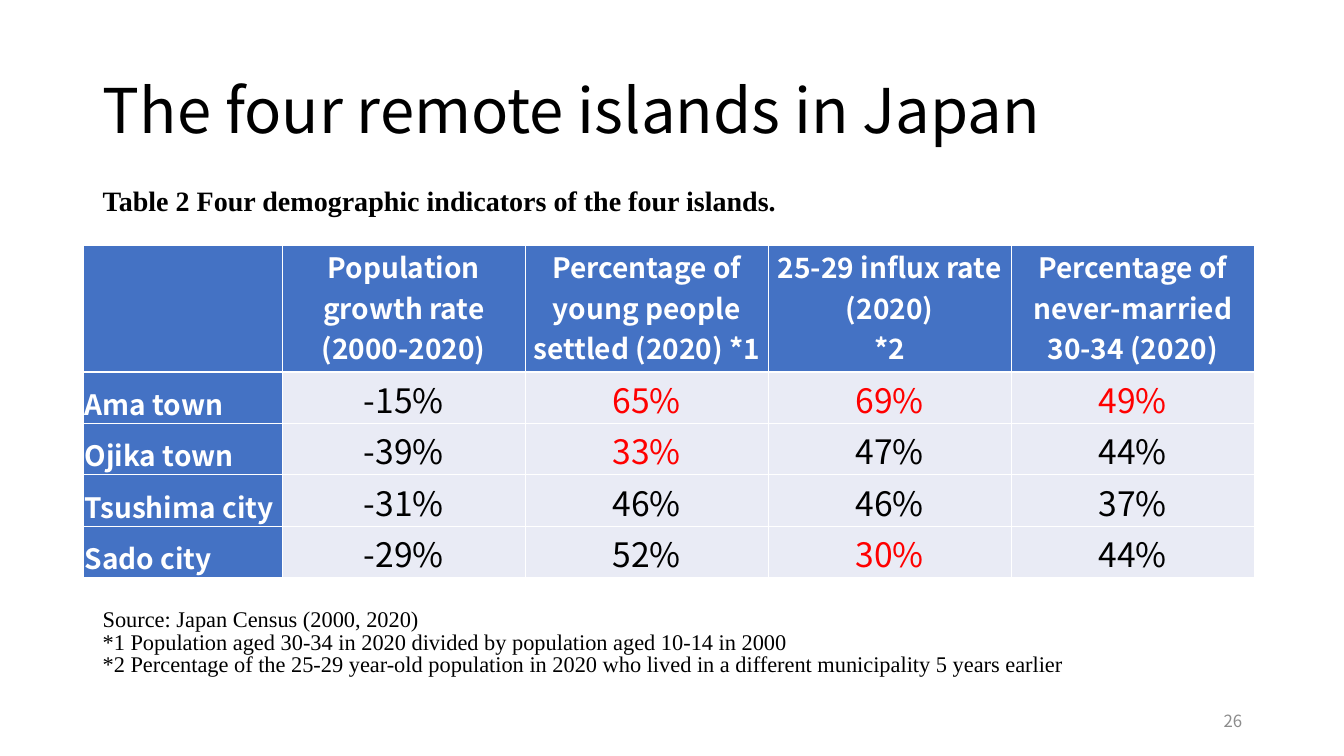
from pptx import Presentation
from pptx import util as u
from pptx.dml.color import RGBColor
from pptx.enum import text
from pptx.oxml import parse_xml
from pptx.oxml.ns import nsdecls

COLORS = {"black": "000000", "white": "FFFFFF", "gray": "8C8C8C",
          "red": "FF0000", "blue": "4472C4", "pale": "E9EBF5"}
SANS, SERIF = "Noto Sans CJK JP", "Times New Roman"
LEFT, CENTER, RIGHT, JUSTIFY = (text.PP_ALIGN.LEFT, text.PP_ALIGN.CENTER,
                                text.PP_ALIGN.RIGHT, text.PP_ALIGN.JUSTIFY)
TOP, MIDDLE, BOTTOM = text.MSO_ANCHOR.TOP, text.MSO_ANCHOR.MIDDLE, text.MSO_ANCHOR.BOTTOM


def write(frame, lines, size, font=SANS, color="black", bold=False, align=LEFT, spacing=None):
    """Fill a text frame with one paragraph per line."""
    frame.word_wrap = True
    for index, line in enumerate(lines):
        para = frame.paragraphs[0] if index == 0 else frame.add_paragraph()
        para.text = line
        para.alignment = align
        para.line_spacing = spacing
        for span in para.runs:
            span.font.size = u.Pt(size)
            span.font.name = font
            span.font.bold = bold
            span.font.color.rgb = RGBColor.from_string(COLORS[color])


deck = Presentation()
deck.slide_width, deck.slide_height = u.Inches(13.33), u.Inches(7.5)
page = deck.slides.add_slide(deck.slide_layouts[5])

# Title
title = page.shapes.title
title.left, title.top = u.Inches(0.92), u.Inches(0.4)
title.width, title.height = u.Inches(11.5), u.Inches(1.45)
title.text_frame.vertical_anchor = MIDDLE
write(title.text_frame, ["The four remote islands in Japan"], 44, spacing=0.9)

# Caption, notes and page number
notes = ["Source: Japan Census (2000, 2020)",
         "*1 Population aged 30-34 in 2020 divided by population aged 10-14 in 2000",
         "*2 Percentage of the 25-29 year-old population in 2020 "
         "who lived in a different municipality 5 years earlier"]
caption = ["Table 2 Four demographic indicators of the four islands."]
for place, anchor, lines, style in [
    ((0.92, 1.77, 10.61, 0.44), TOP, caption, dict(size=20, font=SERIF, bold=True)),
    ((0.92, 6, 12.34, 0.77), TOP, notes,
     dict(size=16, font=SERIF, align=JUSTIFY, spacing=u.Pt(16))),
    ((9.42, 6.95, 3, 0.4), MIDDLE, ["26"], dict(size=12, color="gray", align=RIGHT)),
]:
    box = page.shapes.add_textbox(*[u.Inches(length) for length in place])
    box.text_frame.vertical_anchor = anchor
    write(box.text_frame, lines, **style)

# Table of indicators
rows = [
    ["", "Population growth rate (2000-2020)", "Percentage of young people settled (2020) *1",
     "25-29 influx rate (2020)\n*2", "Percentage of never-married 30-34 (2020)"],
    ["Ama town", "-15%", "65%", "69%", "49%"],
    ["Ojika town", "-39%", "33%", "47%", "44%"],
    ["Tsushima city", "-31%", "46%", "46%", "37%"],
    ["Sado city", "-29%", "52%", "30%", "44%"],
]
highlights = {(1, 2), (1, 3), (1, 4), (2, 2), (4, 3)}
table = page.shapes.add_table(len(rows), len(rows[0]), u.Inches(0.83), u.Inches(2.43),
                              u.Inches(11.59), u.Inches(3.3)).table
for c, column in enumerate(table.columns):
    column.width = u.Inches(2.41 if c else 1.97)
for r, row in enumerate(table.rows):
    row.height = u.Inches(0.51 if r else 1.26)

for r, row in enumerate(rows):
    for c, value in enumerate(row):
        cell = table.cell(r, c)
        heading = r == 0 or c == 0
        cell.margin_left = cell.margin_right = cell.margin_top = u.Inches(0.01)
        cell.margin_bottom = 0
        cell.vertical_anchor = BOTTOM if r else TOP
        # Borders come before the fill in the cell properties
        for side in ("lnL", "lnR", "lnT", "lnB"):
            cell._tc.get_or_add_tcPr().append(parse_xml(
                f'<a:{side} {nsdecls("a")} w="12700"><a:solidFill>'
                f'<a:srgbClr val="{COLORS["white"]}"/></a:solidFill></a:{side}>'))
        cell.fill.solid()
        cell.fill.fore_color.rgb = RGBColor.from_string(COLORS["blue" if heading else "pale"])
        color = "white" if heading else "red" if (r, c) in highlights else "black"
        write(cell.text_frame, [value], 20 if heading else 24, color=color, bold=heading,
              align=CENTER if c else LEFT)

deck.save("out.pptx")
